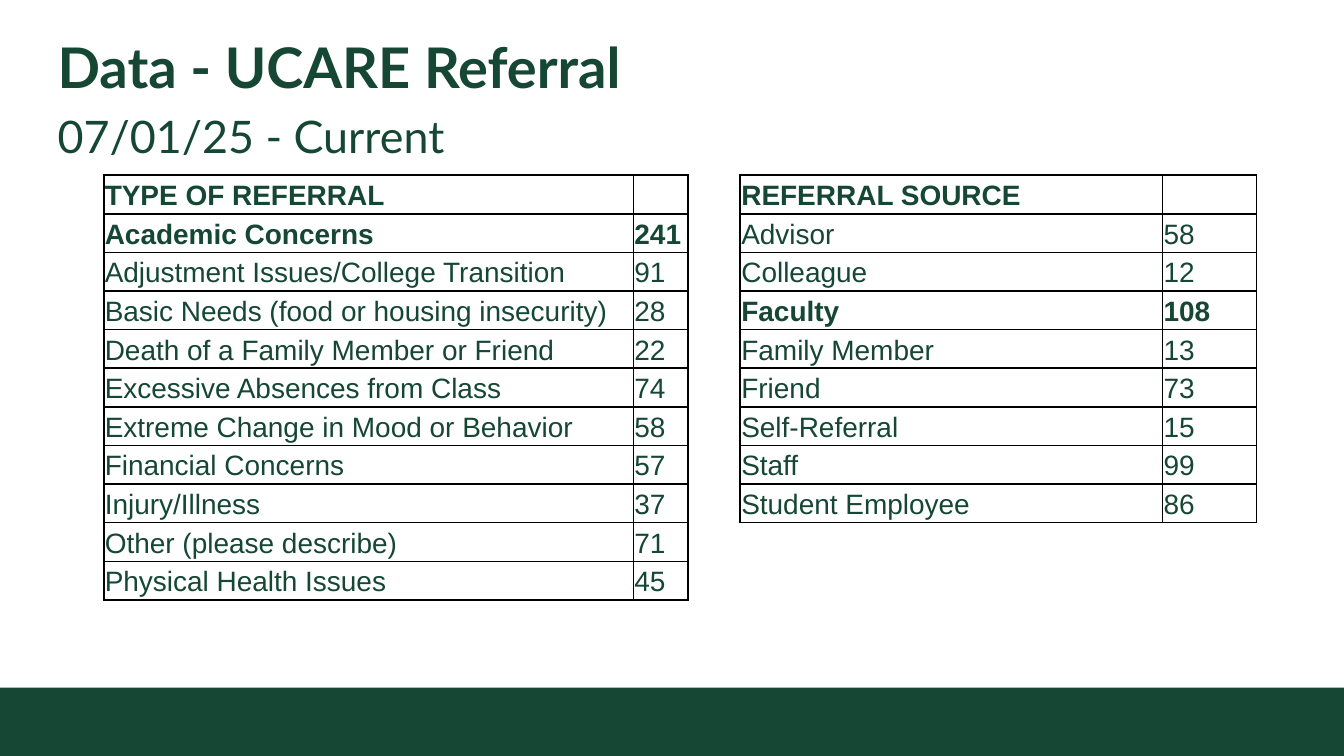
from dataclasses import dataclass

from lxml import etree
from pptx import Presentation
from pptx.dml.color import RGBColor
from pptx.enum.shapes import MSO_SHAPE
from pptx.enum.text import MSO_ANCHOR, MSO_AUTO_SIZE, PP_ALIGN
from pptx.oxml.ns import qn
from pptx.util import Cm, Pt

RECTANGLE = MSO_SHAPE.RECTANGLE
TOP = MSO_ANCHOR.TOP
NO_AUTOFIT = MSO_AUTO_SIZE.NONE
LEFT = PP_ALIGN.LEFT


@dataclass(frozen=True)
class Theme:
    green: str = "154734"
    white: str = "FFFFFF"
    border: str = "000000"
    heading_font: str = "Lato"
    table_font: str = "Arial"
    title_size: int = 30
    subtitle_size: int = 24
    table_size: int = 15
    border_width: float = 1


REFERRAL_TYPES = [
    ("TYPE OF REFERRAL", ""),
    ("Academic Concerns", "241"),
    ("Adjustment Issues/College Transition", "91"),
    ("Basic Needs (food or housing insecurity)", "28"),
    ("Death of a Family Member or Friend", "22"),
    ("Excessive Absences from Class", "74"),
    ("Extreme Change in Mood or Behavior", "58"),
    ("Financial Concerns", "57"),
    ("Injury/Illness", "37"),
    ("Other (please describe)", "71"),
    ("Physical Health Issues", "45"),
]
REFERRAL_SOURCES = [
    ("REFERRAL SOURCE", ""),
    ("Advisor", "58"),
    ("Colleague", "12"),
    ("Faculty", "108"),
    ("Family Member", "13"),
    ("Friend", "73"),
    ("Self-Referral", "15"),
    ("Staff", "99"),
    ("Student Employee", "86"),
]
TABLE_TOP = 3.31
ROW_HEIGHT = 0.73


class SlideBuilder:
    def __init__(self, slide, theme):
        self.slide = slide
        self.theme = theme

    def layout(self, paragraph, spacing):
        paragraph.alignment = LEFT
        paragraph.line_spacing = spacing
        paragraph.space_before = Pt(0)

    def style(self, font, name, size, bold):
        font.name = name
        font.size = Pt(size)
        font.bold = bold
        font.color.rgb = RGBColor.from_string(self.theme.green)

    def heading(self, index, text, top, height, size, bold, spacing):
        heading = self.slide.placeholders[index]
        heading.left, heading.top = Cm(1.09), Cm(top)
        heading.width, heading.height = Cm(23.22), Cm(height)
        frame = heading.text_frame
        frame.text = text
        frame.word_wrap = True
        frame.auto_size = NO_AUTOFIT
        frame.vertical_anchor = TOP
        frame.margin_left = frame.margin_right = 0
        frame.margin_top = frame.margin_bottom = 0
        paragraph = frame.paragraphs[0]
        self.layout(paragraph, spacing)
        self.style(paragraph.font, self.theme.heading_font, size, bold)

    def footer_band(self, left, top, width, height):
        band = self.slide.shapes.add_shape(
            RECTANGLE, Cm(left), Cm(top), Cm(width), Cm(height)
        )
        band.shadow.inherit = False
        band.fill.solid()
        band.fill.fore_color.rgb = RGBColor.from_string(self.theme.green)
        band.line.fill.background()

    def borders(self, cell):
        properties = cell._tc.get_or_add_tcPr()
        for side in ("a:lnL", "a:lnR", "a:lnT", "a:lnB"):
            line = etree.SubElement(
                properties, qn(side), w=str(Pt(self.theme.border_width))
            )
            fill = etree.SubElement(line, qn("a:solidFill"))
            etree.SubElement(fill, qn("a:srgbClr"), val=self.theme.border)

    def cell(self, cell, text, bold):
        cell.margin_left = cell.margin_right = Cm(0.02)
        cell.margin_top = cell.margin_bottom = Cm(0.01)
        cell.vertical_anchor = TOP
        self.borders(cell)
        cell.fill.solid()
        cell.fill.fore_color.rgb = RGBColor.from_string(self.theme.white)
        paragraph = cell.text_frame.paragraphs[0]
        self.layout(paragraph, 1.15)
        if text:
            run = paragraph.add_run()
            run.text = text
            self.style(run.font, self.theme.table_font, self.theme.table_size, bold)
        else:
            etree.SubElement(
                paragraph._p, qn("a:endParaRPr"), sz=str(self.theme.table_size * 100)
            )

    def table(self, rows, left, column_widths, highlighted):
        table = self.slide.shapes.add_table(
            len(rows), len(column_widths), Cm(left), Cm(TABLE_TOP),
            Cm(sum(column_widths)), Cm(ROW_HEIGHT * len(rows)),
        ).table
        table.first_row = table.horz_banding = False
        for column, width in zip(table.columns, column_widths):
            column.width = Cm(width)
        for row_index, values in enumerate(rows):
            table.rows[row_index].height = Cm(ROW_HEIGHT)
            bold = row_index == 0 or values[0] == highlighted
            for column_index, value in enumerate(values):
                self.cell(table.cell(row_index, column_index), value, bold)


def main():
    theme = Theme()
    presentation = Presentation()
    presentation.slide_width = Cm(25.4)
    presentation.slide_height = Cm(14.29)
    slide = presentation.slides.add_slide(presentation.slide_layouts[0])
    builder = SlideBuilder(slide, theme)
    builder.footer_band(-0.1, 13, 25.5, 1.29)
    builder.heading(0, "Data - UCARE Referral", 0.76, 1.12, theme.title_size, True, 0.9)
    builder.heading(1, "07/01/25 - Current", 2.06, 0.86, theme.subtitle_size, False, 1)
    builder.table(REFERRAL_TYPES, 1.96, (10.01, 1.03), "Academic Concerns")
    builder.table(REFERRAL_SOURCES, 13.99, (7.98, 1.78), "Faculty")
    presentation.save("out.pptx")


if __name__ == "__main__":
    main()
